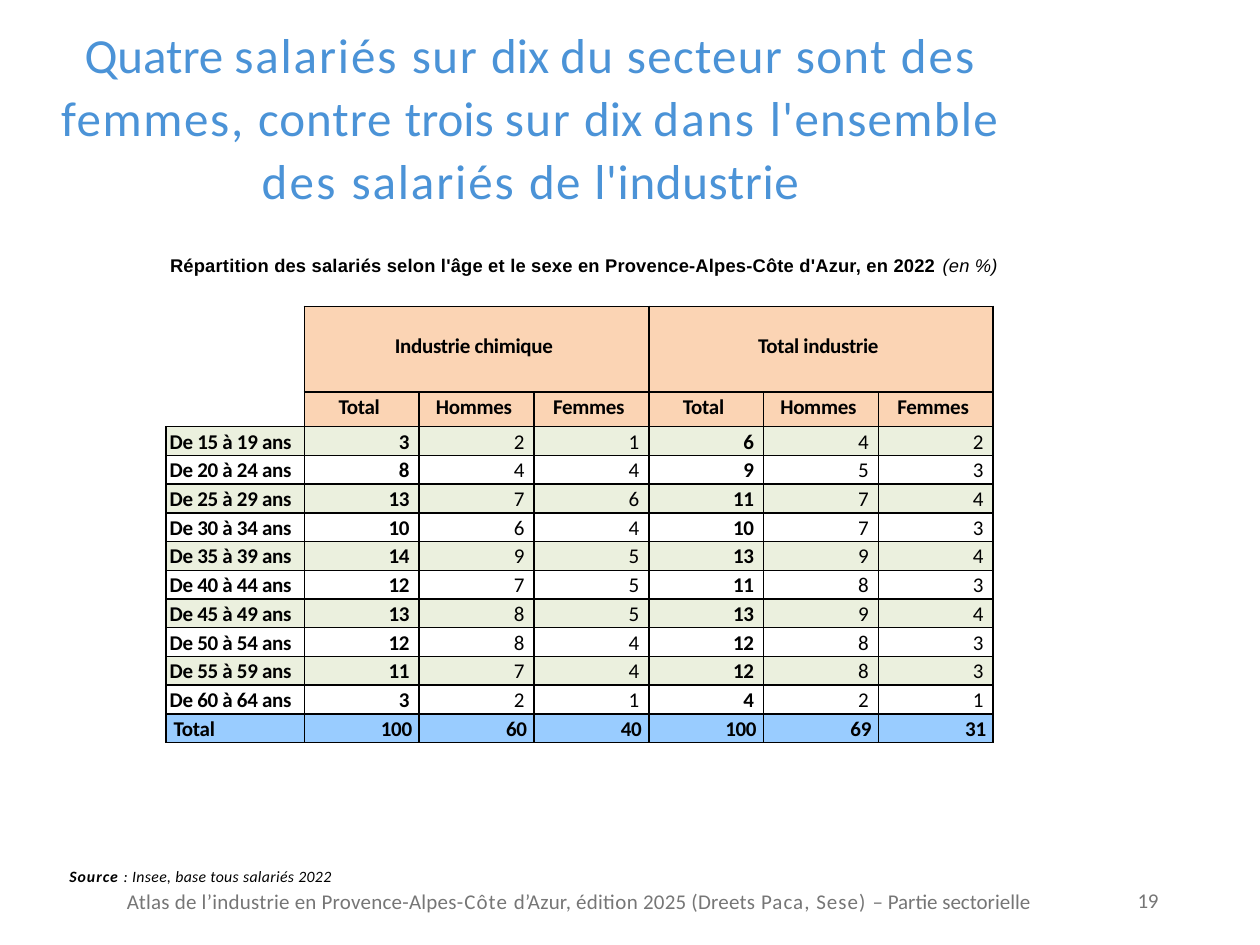
from lxml.etree import SubElement
from pptx import Presentation
from pptx.dml.color import RGBColor
from pptx.enum.text import MSO_ANCHOR as ANCHOR, PP_ALIGN as ALIGN
from pptx.oxml import parse_xml
from pptx.oxml.ns import nsdecls, qn
from pptx.util import Pt


def color(value):
    return RGBColor.from_string(value)


def write(paragraph, runs, size, shade="000000", face="Calibri", align=ALIGN.LEFT, bold=False):
    paragraph.alignment = align
    font = paragraph.font
    font.size, font.name, font.bold = Pt(size), face, bold
    font.color.rgb = color(shade)
    for text, spacing in runs:
        run = paragraph.add_run()
        run.text = text
        run._r.get_or_add_rPr().set("spc", str(round(spacing * 100)))


deck = Presentation()
deck.slide_width, deck.slide_height = Pt(720), Pt(540)
slide = deck.slides.add_slide(deck.slide_layouts[6])

frames = []
for left, top, width, height, inset in [
    (32.4, 10, 541.4, 110, 1.6),
    (39.6, 493.9, 563.8, 29.5, 1.2),
    (650, 506.9, 18, 16.6, 0.2),
    (97.2, 142.6, 483, 15, 2.5),
]:
    frame = slide.shapes.add_textbox(Pt(left), Pt(top), Pt(width), Pt(height)).text_frame
    frame.word_wrap = True
    frame.margin_left = frame.margin_right = frame.margin_bottom = 0
    frame.margin_top = Pt(inset)
    frames.append(frame)
title, footer, page_number, caption = frames

write(title.paragraphs[0], [
    ("Quatre ", 0), ("salariés ", 1.1), ("sur ", 0.9), ("dix ", 0), ("du secteur sont ", 0.8),
    ("des ", 1.2), ("femmes, ", 1), ("contre ", 0.6), ("trois ", 0), ("sur ", 0.9), ("dix ", 0),
    ("dans ", 1.3), ("l'ensemble ", 0.8), ("des ", 1.4), ("salariés ", 1.1), ("de ", 0.8),
    ("l'industrie", 0.4),
], 28, "4B93D7", align=ALIGN.CENTER)
title.paragraphs[0].line_spacing = 1.07

source = footer.paragraphs[0]
write(source, [("Source ", 0.6), (": Insee, base tous salariés 2022", 0.2)], 9)
source.font.italic = True
source.runs[0].font.bold = True

publication = footer.add_paragraph()
publication.space_before = Pt(1.6)
write(publication, [
    ("Atlas de l’industrie en Provence-Alpes-", 0.15), ("Côte ", 0.6),
    ("d’Azur, édition 2025 (Dreets ", 0.15), ("Paca, Sese) ", 0.6), ("– Partie sectorielle", 0),
], 12, "767676")
publication._p.get_or_add_pPr().set("marL", str(Pt(33)))

write(page_number.paragraphs[0], [("19", -0.2)], 12, "767676")

heading = caption.paragraphs[0]
write(heading, [
    ("Répartition des salariés selon l'âge et le sexe en Provence-Alpes-Côte d'Azur, en 2022 ", 0.15),
    ("(en %)", 0.15),
], 10.5, face="Arial", bold=True)
heading.runs[1].font.bold = False
heading.runs[1].font.italic = True

shares = [
    (3, 2, 1, 6, 4, 2), (8, 4, 4, 9, 5, 3), (13, 7, 6, 11, 7, 4), (10, 6, 4, 10, 7, 3),
    (14, 9, 5, 13, 9, 4), (12, 7, 5, 11, 8, 3), (13, 8, 5, 13, 9, 4), (12, 8, 4, 12, 8, 3),
    (11, 7, 4, 12, 8, 3), (3, 2, 1, 4, 2, 1),
]
rows = [
    ("", "Industrie chimique", "", "", "Total industrie", "", ""),
    ("",) + ("Total", "Hommes", "Femmes") * 2,
]
for band, values in enumerate(shares):
    age = 15 + 5 * band
    rows.append((f"De {age} à {age + 4} ans",) + values)
rows.append(("Total", 100, 60, 40, 100, 69, 31))

table = slide.shapes.add_table(13, 7, Pt(95), Pt(175), Pt(479.5), Pt(246.3)).table
table.first_row = table.horz_banding = False
for c, column in enumerate(table.columns):
    column.width = Pt(65.6 if c else 79)
for r, row in enumerate(table.rows):
    row.height = Pt(16.44 if r else 49)

for r, values in enumerate(rows):
    for c, value in enumerate(values):
        cell = table.cell(r, c)
        header, total, corner = r < 2, r == 12, r < 2 and c == 0
        cell.margin_left = cell.margin_right = cell.margin_bottom = 0
        cell.margin_top = Pt(1.4)
        properties = cell._tc.get_or_add_tcPr()
        for side in ("lnR", "lnB") if corner else ("lnL", "lnR", "lnT", "lnB"):
            border = SubElement(properties, qn(f"a:{side}"), w=str(Pt(1)))
            border.append(parse_xml(f'<a:solidFill {nsdecls("a")}><a:srgbClr val="000000"/></a:solidFill>'))
        if corner or (not header and not total and r % 2):
            cell.fill.background()
        else:
            cell.fill.solid()
            cell.fill.fore_color.rgb = color("FBD4B4" if header else "99CCFF" if total else "EBF0DE")
        if header:
            align = ALIGN.CENTER
            cell.margin_right = Pt(3)
        elif c == 0:
            align = ALIGN.LEFT
            cell.margin_left = Pt(4.3 if total else 2)
        else:
            align = ALIGN.RIGHT
            cell.margin_right = Pt(4 if total else 5.5)
        if r == 0:
            cell.vertical_anchor = ANCHOR.MIDDLE
            cell.margin_bottom = Pt(4)
        runs = [(str(value), -0.17)] if value != "" else []
        write(cell.text_frame.paragraphs[0], runs, 12, align=align,
              bold=header or total or c in (0, 1, 4))

table.cell(0, 0).merge(table.cell(1, 0))
for c in (1, 4):
    table.cell(0, c).merge(table.cell(0, c + 2))

deck.save("out.pptx")
